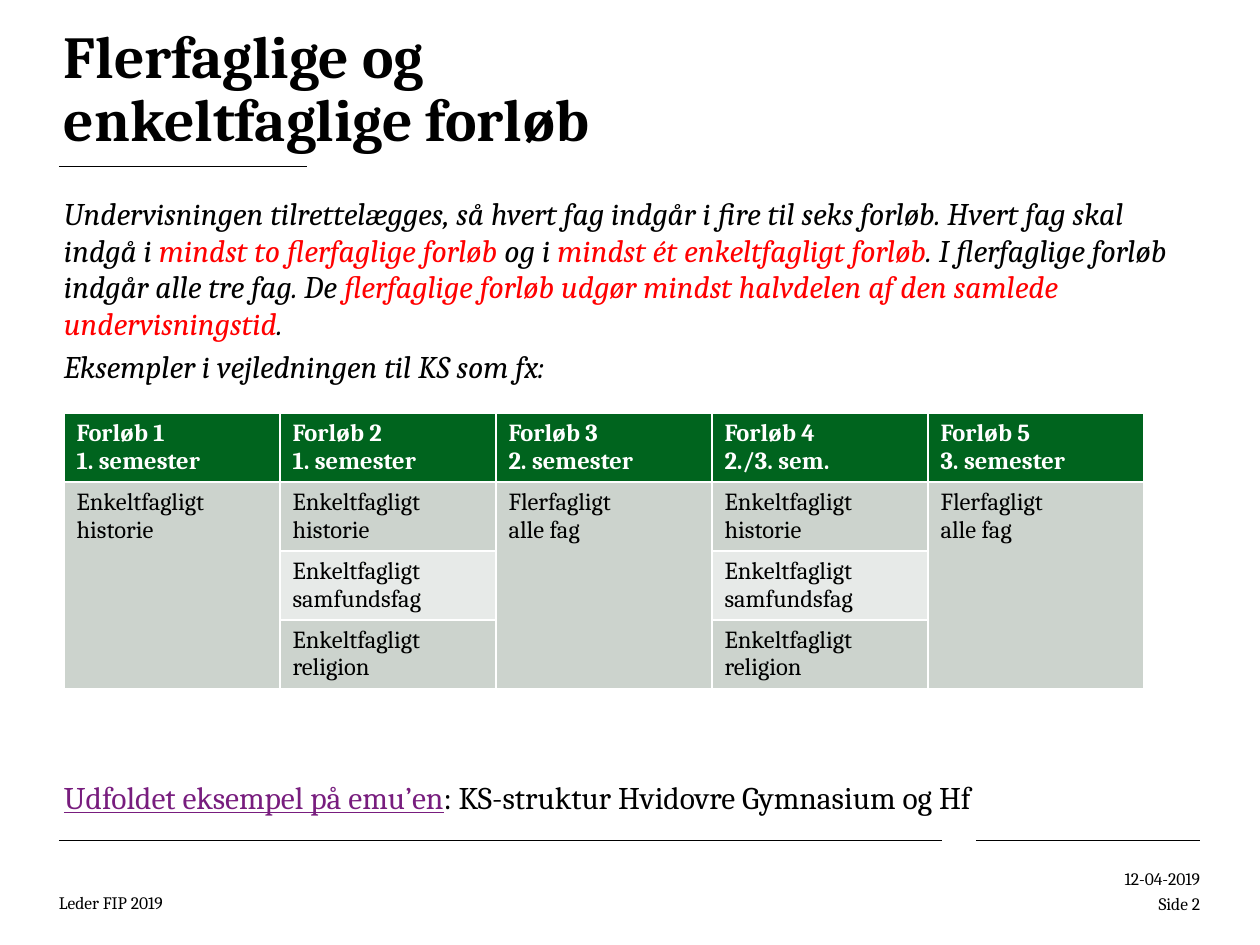
from pptx import Presentation
from pptx.dml.color import RGBColor
from pptx.enum.shapes import MSO_CONNECTOR
from pptx.enum.text import MSO_ANCHOR, PP_ALIGN
from pptx.util import Pt
from lxml import etree

PX = 914400 // 126
FONT = "Cambria"
BLACK = RGBColor(0x00, 0x00, 0x00)
RED = RGBColor(0xFF, 0x00, 0x00)
PURPLE = RGBColor(0x78, 0x1D, 0x7E)
WHITE = RGBColor(0xFF, 0xFF, 0xFF)
GREEN = RGBColor(0x00, 0x64, 0x1E)
GREY = RGBColor(0xCC, 0xD3, 0xCD)
PALE_GREY = RGBColor(0xE7, 0xEA, 0xE8)
STRAIGHT = MSO_CONNECTOR.STRAIGHT
TOP, BOTTOM = MSO_ANCHOR.TOP, MSO_ANCHOR.BOTTOM
LEFT, RIGHT = PP_ALIGN.LEFT, PP_ALIGN.RIGHT
EFFECT_LIST = "{http://schemas.openxmlformats.org/drawingml/2006/main}effectLst"

RULES = [(59, 840, 942), (976, 840, 1200), (59, 166, 307)]
BODY = [
    [("Undervisningen tilrettelægges, så hvert fag indgår i fire til seks "
      "forløb. Hvert fag skal indgå i ", BLACK),
     ("mindst to flerfaglige forløb ", RED),
     ("og i ", BLACK),
     ("mindst ét enkeltfagligt forløb", RED),
     (". I flerfaglige forløb indgår alle tre fag. De ", BLACK),
     ("flerfaglige forløb udgør mindst halvdelen af den samlede undervisningstid", RED),
     (".", BLACK)],
    [("Eksempler i vejledningen til KS som fx:", BLACK)],
]
HEADERS = [
    ["Forløb 1", "1. semester"],
    ["Forløb 2", "1. semester"],
    ["Forløb 3", "2. semester"],
    ["Forløb 4", "2./3. sem."],
    ["Forløb 5", "3. semester"],
]
SUBJECTS = [["Enkeltfagligt " + name] for name in ("historie", "samfundsfag", "religion")]
SHARED = ["Flerfagligt", "alle fag"]
# One entry per column; a column with a single cell spans all three rows
COURSES = [SUBJECTS[:1], SUBJECTS, [SHARED], SUBJECTS, [SHARED]]
ROW_FILLS = [GREY, PALE_GREY, GREY]


def add_span(para, text, size, color, bold=False, italic=False, underline=False):
    span = para.add_run()
    span.text = text
    font = span.font
    font.name, font.size = FONT, Pt(size)
    font.bold, font.italic, font.underline = bold, italic, underline
    font.color.rgb = color


def next_para(frame, index, spacing, align=LEFT):
    para = frame.add_paragraph() if index else frame.paragraphs[0]
    para.line_spacing = Pt(spacing)
    para.space_before = Pt(0)
    para.alignment = align
    return para


def place(shape, left, top, width, height):
    shape.left, shape.top = left * PX, top * PX
    shape.width, shape.height = width * PX, height * PX


def set_frame(shape, anchor, left, top, right, bottom):
    frame = shape.text_frame
    frame.word_wrap = True
    frame.vertical_anchor = anchor
    frame.margin_left, frame.margin_top = left * PX, top * PX
    frame.margin_right, frame.margin_bottom = right * PX, bottom * PX
    return frame


def add_box(page, left, top, width, height, anchor, margins):
    box = page.shapes.add_textbox(left * PX, top * PX, width * PX, height * PX)
    return set_frame(box, anchor, *margins)


def add_rule(page, left, top, right):
    rule = page.shapes.add_connector(STRAIGHT, left * PX, top * PX, right * PX, top * PX)
    rule.line.color.rgb = BLACK
    rule.line.width = Pt(0.5)
    etree.SubElement(rule._element.spPr, EFFECT_LIST)


def add_title(page):
    title = page.shapes.title
    place(title, 64, 1, 893, 158)
    para = next_para(set_frame(title, BOTTOM, 0, 6, 0, 6), 0, 36)
    add_span(para, "Flerfaglige og ", 34, BLACK, bold=True)
    para.add_line_break()
    add_span(para, "enkeltfaglige forløb", 34, BLACK, bold=True)


def add_body(page):
    margins = (0, 0, 13, 6)
    frame = add_box(page, 64, 195, 1140, 200, TOP, margins)
    for index, spans in enumerate(BODY):
        para = next_para(frame, index, 21)
        if index:
            para.space_before = Pt(3.6)
        for text, color in spans:
            add_span(para, text, 18, color, italic=True)

    frame = add_box(page, 64, 779, 1140, 43, TOP, margins)
    para = next_para(frame, 0, 21)
    add_span(para, "Udfoldet eksempel på emu’en", 18, PURPLE, underline=True)
    add_span(para, ": KS-struktur Hvidovre Gymnasium og Hf", 18, BLACK)


def fill_cell(cell, lines, fill, color, bold=False):
    cell.fill.solid()
    cell.fill.fore_color.rgb = fill
    for index, line in enumerate(lines):
        para = next_para(cell.text_frame, index, 16)
        add_span(para, line, 14, color, bold=bold)


def add_course_table(page):
    column_width, row_height = 216, 69
    row_count, column_count = len(ROW_FILLS) + 1, len(HEADERS)
    table = page.shapes.add_table(
        row_count, column_count, 64 * PX, 413 * PX,
        column_count * column_width * PX, row_count * row_height * PX).table
    for column in table.columns:
        column.width = column_width * PX
    for row in table.rows:
        row.height = row_height * PX
    for column, (header, courses) in enumerate(zip(HEADERS, COURSES)):
        fill_cell(table.cell(0, column), header, GREEN, WHITE, bold=True)
        if len(courses) == 1:
            table.cell(1, column).merge(table.cell(row_count - 1, column))
        for row, (lines, fill) in enumerate(zip(courses, ROW_FILLS), start=1):
            fill_cell(table.cell(row, column), lines, fill, BLACK)


def add_footer(page, text, left, top, width, height, align):
    margins = (13, 6, 0, 0) if align == RIGHT else (0, 6, 13, 0)
    frame = add_box(page, left, top, width, height, BOTTOM, margins)
    add_span(next_para(frame, 0, 14, align), text, 10, BLACK)


def main():
    deck = Presentation()
    deck.slide_width, deck.slide_height = 1260 * PX, 945 * PX
    page = deck.slides.add_slide(deck.slide_layouts[5])

    # Rules around the content
    for rule in RULES:
        add_rule(page, *rule)

    # Title, body and table
    add_title(page)
    add_body(page)
    add_course_table(page)

    # Footer
    add_footer(page, "12-04-2019", 976, 864, 224, 25, RIGHT)
    add_footer(page, "Leder FIP 2019", 59, 864, 883, 49, LEFT)
    add_footer(page, "Side 2", 976, 889, 224, 25, RIGHT)

    deck.save("out.pptx")


if __name__ == "__main__":
    main()
